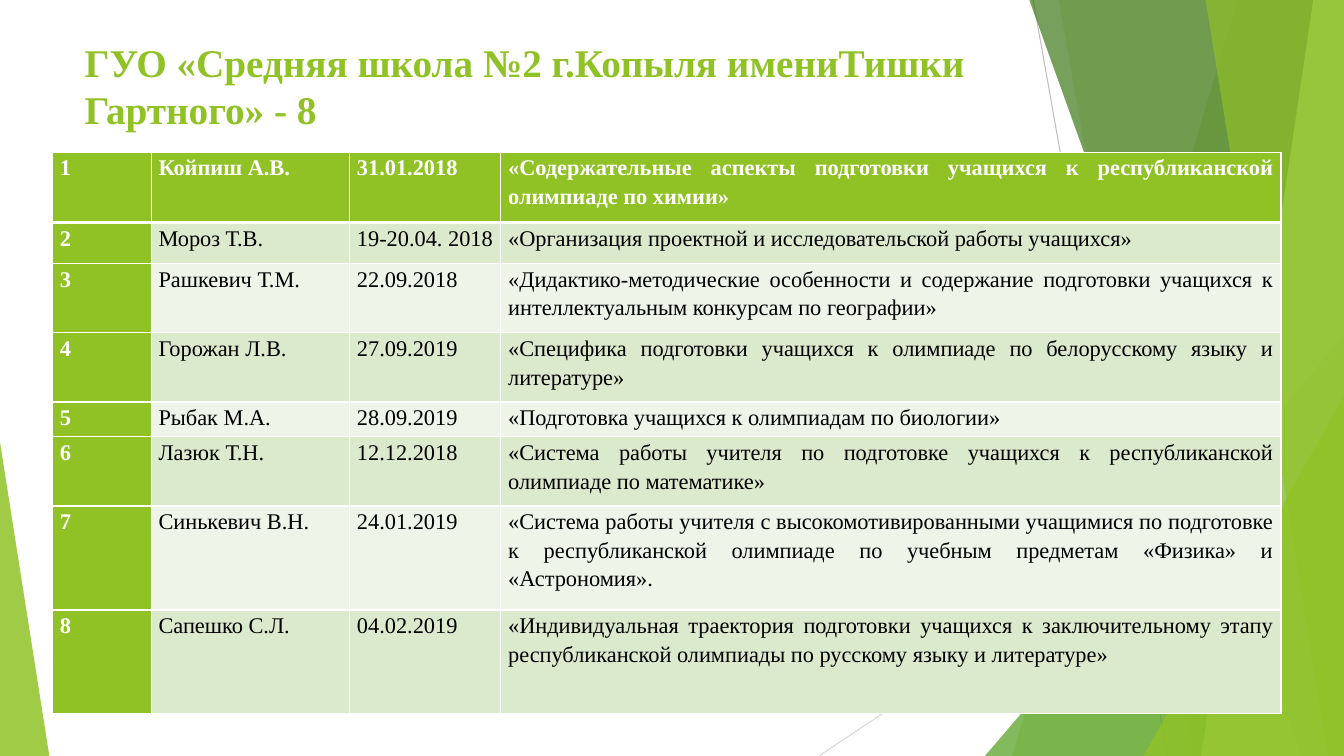
from dataclasses import dataclass

from lxml import etree
from pptx import Presentation
from pptx import util as u
from pptx.dml.color import RGBColor
from pptx.enum import shapes, text
from pptx.oxml.ns import qn

PX = 9525  # EMU per px, 96 px to the inch
WIDTH, HEIGHT = 1280, 720
TOP = -1  # facets start just above the slide edge

FONT = "Times New Roman"
WHITE = RGBColor(0xFF, 0xFF, 0xFF)
BLACK = RGBColor(0, 0, 0)
LIME = RGBColor(0x90, 0xC2, 0x26)
GREEN = RGBColor(0x54, 0xA0, 0x21)
DARK_GREEN = RGBColor(0x3F, 0x78, 0x19)
PALE_LIME = RGBColor(0xC0, 0xE4, 0x74)
BANDS = (RGBColor(0xDB, 0xE9, 0xCD), RGBColor(0xEE, 0xF4, 0xE8))
GREY = RGBColor(0xBF, 0xBF, 0xBF)
LIGHT_GREY = RGBColor(0xD9, 0xD9, 0xD9)


@dataclass(frozen=True)
class Ray:
    start: tuple[int, int]
    end: tuple[int, int]
    color: RGBColor


@dataclass(frozen=True)
class Facet:
    """Full-height panel from a slanted left side to the right slide edge."""
    top_x: int
    bottom_x: int
    color: RGBColor
    opacity: int


@dataclass(frozen=True)
class Corner:
    """Triangle on the slide bottom, with its apex at one end (0 left, 1 right)."""
    left: int
    top: int
    width: int
    apex: int
    color: RGBColor
    opacity: int


@dataclass(frozen=True)
class Talk:
    speaker: str
    date: str
    topic: str
    height: int


RAYS = (
    Ray((984, 0), (1112, HEIGHT), GREY),
    Ray((WIDTH, 387), (780, HEIGHT), LIGHT_GREY),
)
DECOR = (
    Facet(1179, 964, LIME, 30),
    Facet(1008, 1136, LIME, 20),
    Corner(938, 320, 342, 1, GREEN, 72),
    Facet(980, 1239, DARK_GREEN, 70),
    Facet(1251, 1144, PALE_LIME, 70),
    Facet(1148, 1265, LIME, 65),
    Corner(1089, 377, 191, 1, LIME, 80),
    Corner(0, 421, 47, 0, LIME, 85),
)
TITLE = "ГУО «Средняя школа №2 г.Копыля имениТишки Гартного» - 8"
COLUMNS = (94, 189, 144, 743)
TALKS = (
    Talk("Койпиш А.В.", "31.01.2018",
         "«Содержательные аспекты подготовки учащихся к республиканской олимпиаде по химии»", 67),
    Talk("Мороз Т.В.", "19-20.04. 2018",
         "«Организация проектной и исследовательской работы учащихся»", 39),
    Talk("Рашкевич Т.М.", "22.09.2018",
         "«Дидактико-методические особенности и содержание подготовки учащихся "
         "к интеллектуальным конкурсам по географии»", 66),
    Talk("Горожан Л.В.", "27.09.2019",
         "«Специфика подготовки учащихся к олимпиаде по белорусскому языку и литературе»", 66),
    Talk("Рыбак М.А.", "28.09.2019", "«Подготовка учащихся к олимпиадам по биологии»", 33),
    Talk("Лазюк Т.Н.", "12.12.2018",
         "«Система работы учителя по подготовке учащихся к республиканской "
         "олимпиаде по математике»", 66),
    Talk("Синькевич В.Н.", "24.01.2019",
         "«Система работы учителя с высокомотивированными учащимися по подготовке "
         "к республиканской олимпиаде по учебным предметам «Физика» и «Астрономия».", 99),
    Talk("Сапешко С.Л.", "04.02.2019",
         "«Индивидуальная траектория подготовки учащихся к заключительному этапу "
         "республиканской олимпиады по русскому языку и литературе»", 99),
)


def px(*lengths: int) -> list[int]:
    return [length * PX for length in lengths]


def write(frame, content: str, *, size: int, color: RGBColor, bold: bool = False,
          align=text.PP_ALIGN.LEFT, spacing: float = 1.0) -> None:
    paragraph = frame.paragraphs[0]
    paragraph.alignment = align
    paragraph.line_spacing = spacing
    run = paragraph.add_run()
    run.text = content
    run.font.name = FONT
    run.font.size = u.Pt(size)
    run.font.bold = bold
    run.font.color.rgb = color


def draw_ray(slide, ray: Ray) -> None:
    line = slide.shapes.add_connector(
        shapes.MSO_CONNECTOR.STRAIGHT, *px(*ray.start, *ray.end))
    line.line.color.rgb = ray.color
    line.line.width = u.Pt(0.75)
    etree.SubElement(line.element.spPr, qn("a:effectLst"))


def draw_decor(slide, piece: Facet | Corner) -> None:
    if isinstance(piece, Facet):
        outline = slide.shapes.build_freeform(piece.top_x, TOP, scale=PX)
        outline.add_line_segments(
            [(WIDTH, TOP), (WIDTH, HEIGHT), (piece.bottom_x, HEIGHT)], close=True)
        shape = outline.convert_to_shape()
    else:
        shape = slide.shapes.add_shape(
            shapes.MSO_SHAPE.ISOSCELES_TRIANGLE,
            *px(piece.left, piece.top, piece.width, HEIGHT - piece.top))
        shape.adjustments[0] = piece.apex
    shape.shadow.inherit = False
    shape.line.fill.background()
    shape.fill.solid()
    shape.fill.fore_color.rgb = piece.color
    color = shape.element.spPr.find(qn("a:solidFill"))[0]
    etree.SubElement(color, qn("a:alpha"), val=str(piece.opacity * 1000))


def draw_title(slide) -> None:
    title = slide.shapes.title
    title.left, title.top, title.width, title.height = px(71, 32, 902, 113)
    title.text_frame.vertical_anchor = text.MSO_ANCHOR.TOP
    title.text_frame.word_wrap = True
    write(title.text_frame, TITLE, size=28, color=LIME, bold=True)
    slide.shapes.element.append(title.element)  # in front of the facets


def add_border(cell, side: str, points: int) -> None:
    border = etree.SubElement(
        cell._tc.get_or_add_tcPr(), qn(f"a:ln{side}"), w=str(u.Pt(points)))
    fill = etree.SubElement(border, qn("a:solidFill"))
    etree.SubElement(fill, qn("a:srgbClr"), val=str(WHITE))


def draw_talks(slide) -> None:
    height = sum(talk.height for talk in TALKS)
    table = slide.shapes.add_table(
        len(TALKS), len(COLUMNS), *px(50, 145, sum(COLUMNS), height)).table
    for column, width in zip(table.columns, COLUMNS):
        column.width = width * PX
    for row, talk in enumerate(TALKS):
        table.rows[row].height = talk.height * PX
        values = (str(row + 1), talk.speaker, talk.date, talk.topic)
        for col, value in enumerate(values):
            cell = table.cell(row, col)
            heading = row == 0 or col == 0
            cell.margin_left = cell.margin_right = 7 * PX
            cell.margin_top = cell.margin_bottom = 0
            for side in "LRTB":
                under_heading = (row, side) in ((0, "B"), (1, "T"))
                add_border(cell, side, 3 if under_heading else 1)
            cell.fill.solid()
            cell.fill.fore_color.rgb = LIME if heading else BANDS[(row - 1) % 2]
            write(cell.text_frame, value, size=16, bold=heading, spacing=1.15,
                  color=WHITE if heading else BLACK,
                  align=text.PP_ALIGN.JUSTIFY if col == 3 else text.PP_ALIGN.LEFT)


def main() -> None:
    deck = Presentation()
    deck.slide_width, deck.slide_height = px(WIDTH, HEIGHT)
    slide = deck.slides.add_slide(deck.slide_layouts.get_by_name("Title Only"))
    for ray in RAYS:
        draw_ray(slide, ray)
    for piece in DECOR:
        draw_decor(slide, piece)
    draw_title(slide)
    draw_talks(slide)
    deck.save("out.pptx")


if __name__ == "__main__":
    main()
